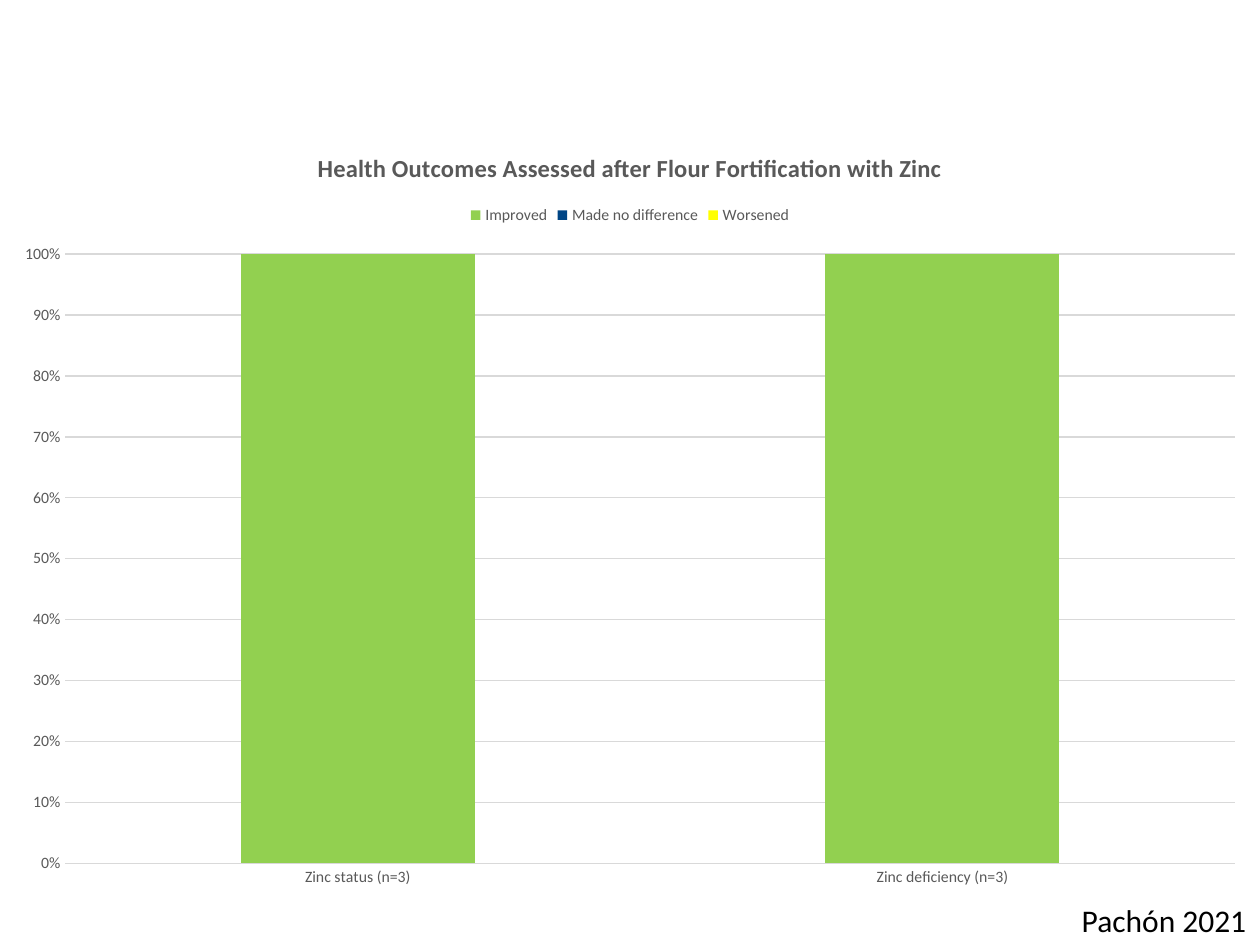
from pptx import Presentation
from pptx import util as u
from pptx.chart.data import CategoryChartData
from pptx.dml.color import RGBColor
from pptx.enum import chart as ch, text

FACE = "Calibri"
BLACK = RGBColor(0x00, 0x00, 0x00)
GREY = RGBColor(0x59, 0x59, 0x59)
PALE = RGBColor(0xD9, 0xD9, 0xD9)
GREEN = RGBColor(0x92, 0xD0, 0x50)
BLUE = RGBColor(0x00, 0x45, 0x85)
YELLOW = RGBColor(0xFF, 0xFF, 0x00)

TITLE = "Health Outcomes Assessed after Flour Fortification with Zinc"
CITE = "Pachón 2021"
CATS = ["Zinc status (n=3)", "Zinc deficiency (n=3)"]
SERIES = [
    ("Improved", (100, 100), GREEN),
    ("Made no difference", (0, 0), BLUE),
    ("Worsened", (0, 0), YELLOW),
]


def style(font, size, color=GREY, bold=False):
    font.name, font.size, font.bold = FACE, u.Pt(size), bold
    font.color.rgb = color


def rule(line):
    line.color.rgb = PALE
    line.width = u.Pt(0.75)


def add_bars(slide, width):
    data = CategoryChartData()
    data.categories = CATS
    for name, vals, _ in SERIES:
        data.add_series(name, vals)
    chart = slide.shapes.add_chart(
        ch.XL_CHART_TYPE.COLUMN_STACKED_100,
        0, u.Inches(0.99), width, u.Inches(6.17), data).chart
    style(chart.font, 10, BLACK)

    chart.has_title = True
    head = chart.chart_title.text_frame
    head.text = TITLE
    style(head.paragraphs[0].font, 14, bold=True)
    chart.chart_title.include_in_layout = False

    chart.has_legend = True
    chart.legend.position = ch.XL_LEGEND_POSITION.TOP
    chart.legend.include_in_layout = False
    style(chart.legend.font, 9)

    plot = chart.plots[0]
    plot.gap_width, plot.overlap = 150, 100
    plot.vary_by_categories = False
    for bar, (_, _, color) in zip(plot.series, SERIES):
        bar.format.fill.solid()
        bar.format.fill.fore_color.rgb = color

    cat, val = chart.category_axis, chart.value_axis
    for axis in (cat, val):
        axis.major_tick_mark = axis.minor_tick_mark = ch.XL_TICK_MARK.NONE
        style(axis.tick_labels.font, 9)
    rule(cat.format.line)
    val.format.line.fill.background()
    val.has_major_gridlines = True
    rule(val.major_gridlines.format.line)
    val.tick_labels.number_format = "0%"
    val.tick_labels.number_format_is_linked = False


def add_cite(slide):
    box = slide.shapes.add_textbox(*map(u.Inches, (8.14, 7.1, 1.85, 0.4)))
    frame = box.text_frame
    frame.word_wrap = True
    frame.auto_size = text.MSO_AUTO_SIZE.SHAPE_TO_FIT_TEXT
    para = frame.paragraphs[0]
    para.text = CITE
    para.alignment = text.PP_ALIGN.RIGHT
    style(para.font, 18, BLACK)


def main():
    deck = Presentation()
    deck.slide_width, deck.slide_height = u.Inches(10), u.Inches(7.5)
    slide = deck.slides.add_slide(deck.slide_layouts[6])
    add_bars(slide, deck.slide_width)
    add_cite(slide)
    deck.save("out.pptx")


if __name__ == "__main__":
    main()
